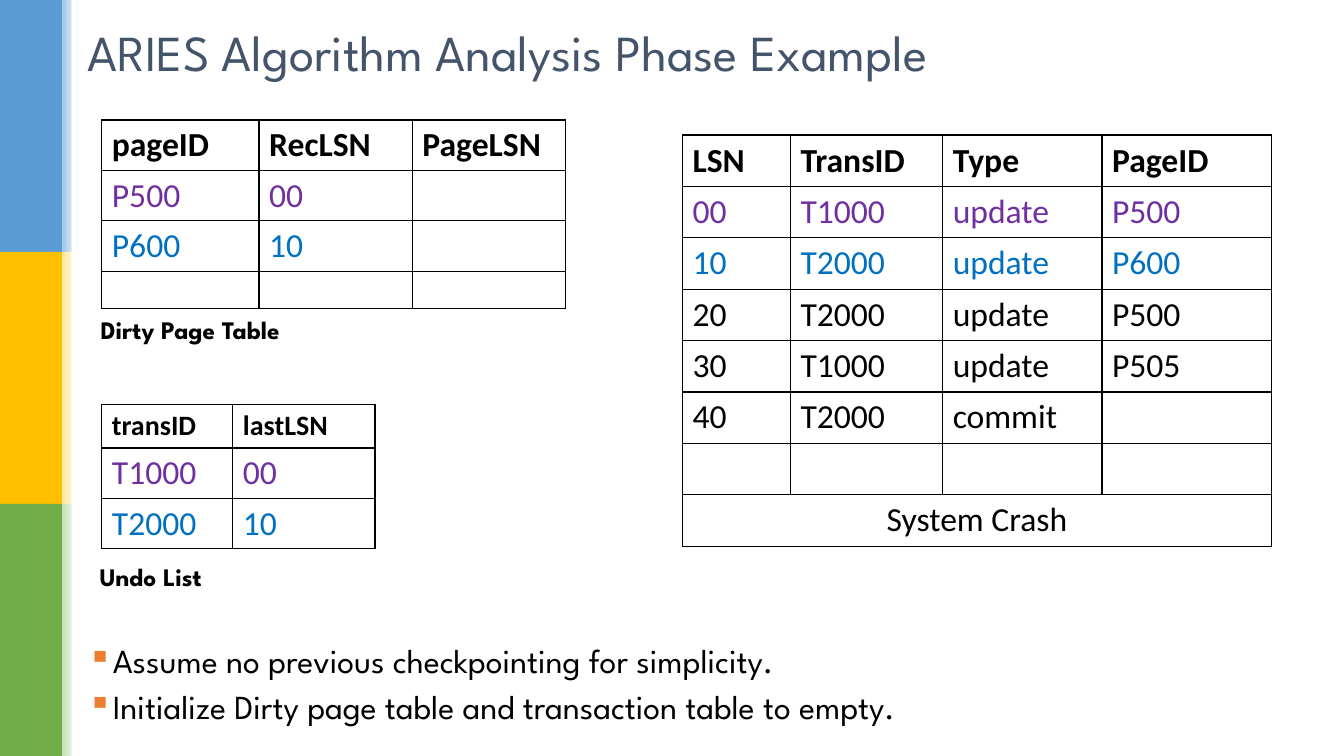
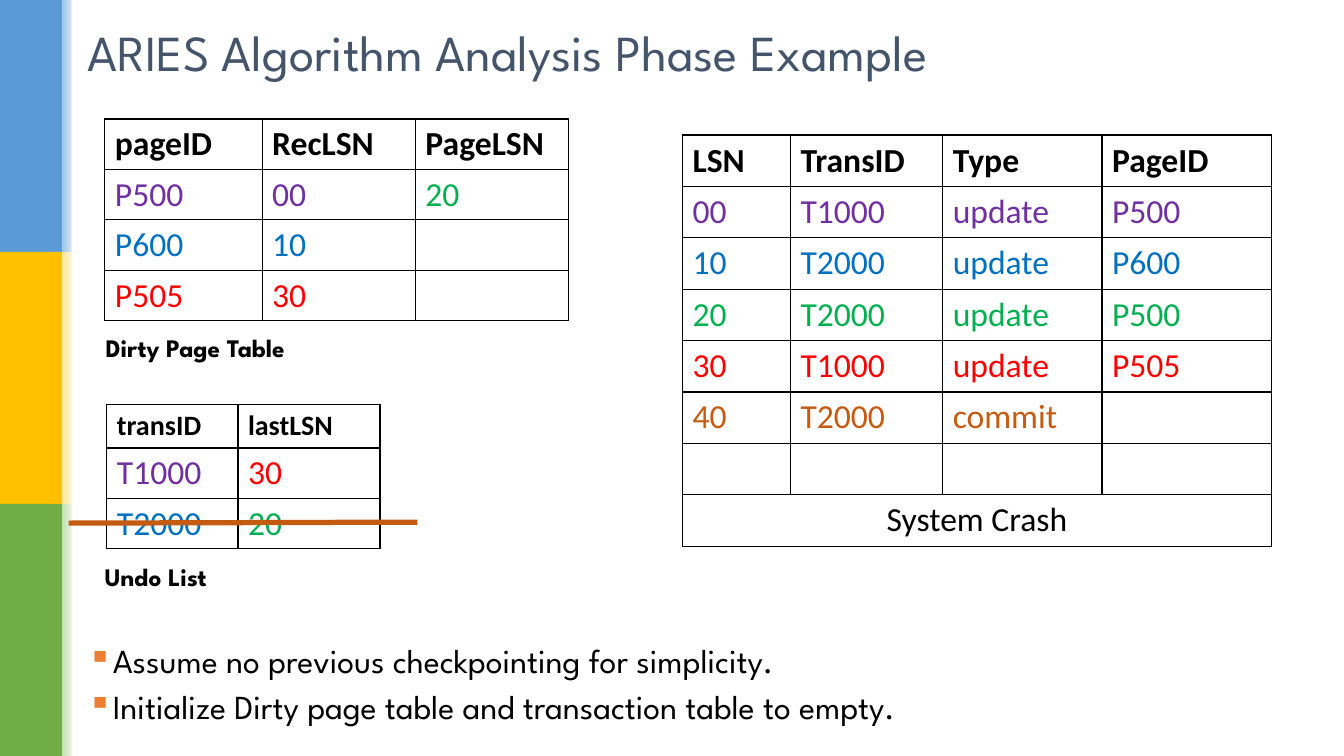
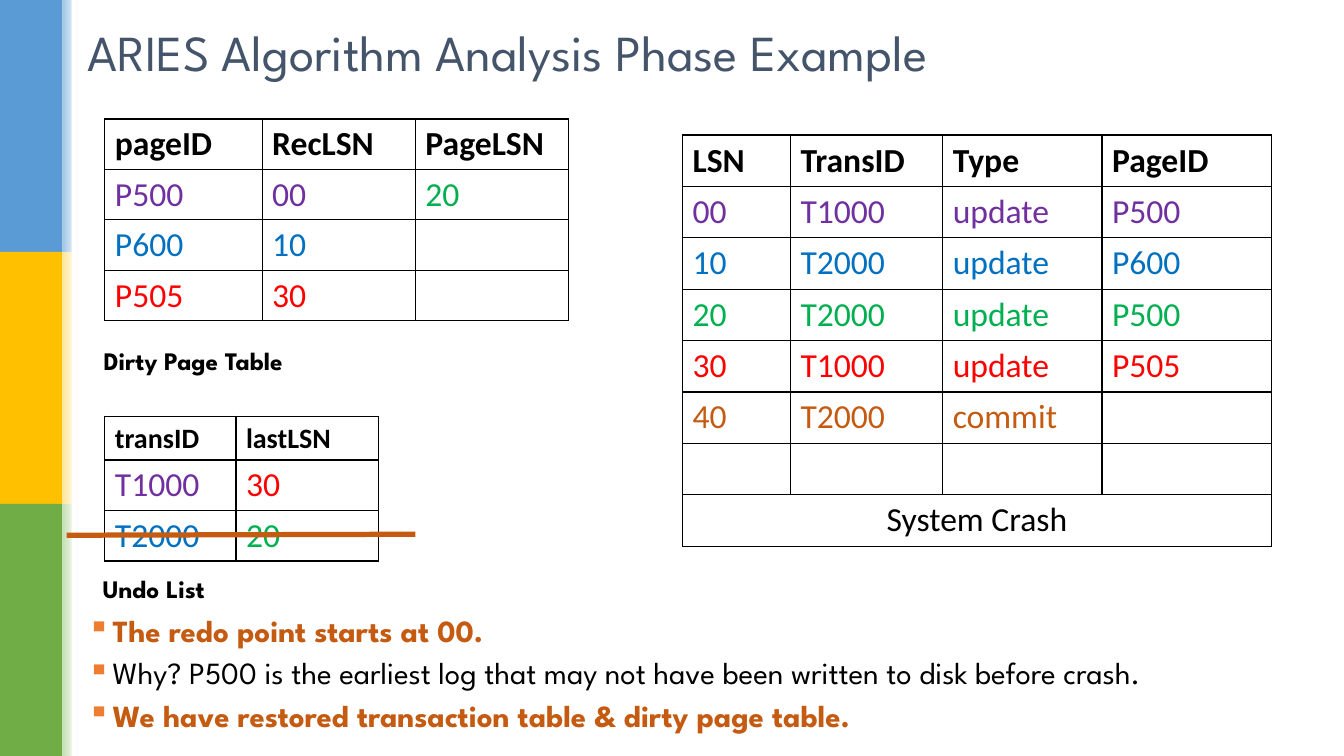
from dataclasses import dataclass

from lxml import etree
from pptx import Presentation
from pptx.dml.color import RGBColor
from pptx.enum.shapes import MSO_CONNECTOR, MSO_SHAPE
from pptx.enum.text import MSO_ANCHOR, PP_ALIGN
from pptx.oxml.ns import qn
from pptx.util import Inches, Pt

RECTANGLE = MSO_SHAPE.RECTANGLE
STRAIGHT = MSO_CONNECTOR.STRAIGHT
MIDDLE, TOP = MSO_ANCHOR.MIDDLE, MSO_ANCHOR.TOP
CENTER = PP_ALIGN.CENTER


@dataclass(frozen=True)
class Theme:
    heading_font: str = "League Spartan"
    table_font: str = "Calibri"
    title: str = "44546A"
    black: str = "000000"
    white: str = "FFFFFF"
    bullet: str = "ED7D31"
    purple: str = "7030A0"
    blue: str = "0070C0"
    green: str = "00B050"
    red: str = "FF0000"
    rust: str = "C55A11"
    # Band colour and the start of the fade beside it, from top to bottom
    bands: tuple = (("5B9BD5", "9DC3E6"), ("FFC000", "FFE699"), ("70AD47", "C5E0B4"))
    title_size: int = 36
    body_size: int = 24
    small_body_size: int = 22
    small_header_size: int = 20
    label_size: int = 18
    empty_cell_size: int = 16
    border_width: float = 1
    strike_width: float = 3.75


THEME = Theme()


def rgb(colour):
    return RGBColor.from_string(colour)


def coloured_row(colour, *texts):
    return [(text, colour) for text in texts]


class Deck:
    def __init__(self):
        self.presentation = Presentation()
        self.presentation.slide_width = Inches(13.33)
        self.presentation.slide_height = Inches(7.5)
        self.slide = None

    def new_slide(self, title):
        self.slide = self.presentation.slides.add_slide(self.presentation.slide_layouts[6])
        self.side_bands()
        frame = self.text_frame(0.77, 0.22, 10.34, 0.58, MIDDLE)
        self.run(frame.paragraphs[0], title, THEME.title_size, THEME.title)

    def rectangle(self, left, top, width, height, colour, fade_to=None):
        shape = self.slide.shapes.add_shape(
            RECTANGLE, Inches(left), Inches(top), Inches(width), Inches(height))
        shape.shadow.inherit = False
        shape.line.fill.background()
        if fade_to is None:
            shape.fill.solid()
            shape.fill.fore_color.rgb = rgb(colour)
            return
        shape.fill.gradient()
        shape.fill.gradient_angle = 0
        for stop, stop_colour in zip(shape.fill.gradient_stops, (colour, fade_to)):
            stop.color.rgb = rgb(stop_colour)

    def side_bands(self):
        height = 2.5
        for index, (colour, fade) in enumerate(THEME.bands):
            self.rectangle(0, index * height, 0.62, height, colour)
            self.rectangle(0.62, index * height, 0.16, height, fade, THEME.white)
        self.rectangle(0.71, 0, 0.05, 7.5, THEME.white)

    def text_frame(self, left, top, width, height, anchor=TOP):
        box = self.slide.shapes.add_textbox(
            Inches(left), Inches(top), Inches(width), Inches(height))
        box.text_frame.word_wrap = True
        box.text_frame.vertical_anchor = anchor
        return box.text_frame

    def run(self, paragraph, text, size, colour, bold=False, font=THEME.heading_font):
        run = paragraph.add_run()
        run.text = text
        run.font.name = font
        run.font.size = Pt(size)
        run.font.bold = bold
        run.font.color.rgb = rgb(colour)

    def label(self, left, top, text):
        frame = self.text_frame(left, top, 2.56, 0.4)
        self.run(frame.paragraphs[0], text, THEME.label_size, THEME.black, bold=True)

    def bullets(self, top, width, height, size, items):
        """Items are (text, emphasised) pairs."""
        frame = self.text_frame(0.77, top, width, height)
        for index, (text, emphasised) in enumerate(items):
            paragraph = frame.add_paragraph() if index else frame.paragraphs[0]
            paragraph.line_spacing = 0.9
            paragraph.space_before = Pt(0.3 * size if index else 0)
            properties = paragraph._p.get_or_add_pPr()
            properties.set("marL", str(Inches(0.25)))
            properties.set("indent", str(-Inches(0.25)))
            bullet_colour = etree.SubElement(properties, qn("a:buClr"))
            etree.SubElement(bullet_colour, qn("a:srgbClr"), val=THEME.bullet)
            etree.SubElement(properties, qn("a:buChar"), char="▪")
            colour = THEME.rust if emphasised else THEME.black
            self.run(paragraph, text, size, colour, emphasised)

    def cell_borders(self, cell):
        properties = cell._tc.get_or_add_tcPr()
        for side in ("a:lnL", "a:lnR", "a:lnT", "a:lnB"):
            line = etree.SubElement(properties, qn(side), w=str(Pt(THEME.border_width)))
            fill = etree.SubElement(line, qn("a:solidFill"))
            etree.SubElement(fill, qn("a:srgbClr"), val=THEME.black)

    def table(self, left, top, widths, heights, header, rows, header_size=THEME.body_size):
        """Rows are lists of (text, colour) pairs; missing cells stay empty."""
        frame = self.slide.shapes.add_table(
            len(heights), len(widths), Inches(left), Inches(top),
            Inches(sum(widths)), Inches(sum(heights)))
        table = frame.table
        table.first_row = table.horz_banding = False
        for column, width in zip(table.columns, widths):
            column.width = Inches(width)
        for row, height in zip(table.rows, heights):
            row.height = Inches(height)
        contents = {(0, column): (text, THEME.black) for column, text in enumerate(header)}
        for row_index, row in enumerate(rows, 1):
            for column_index, content in enumerate(row):
                contents[row_index, column_index] = content
        for row_index in range(len(heights)):
            for column_index in range(len(widths)):
                cell = table.cell(row_index, column_index)
                self.cell_borders(cell)
                cell.fill.background()
                paragraph = cell.text_frame.paragraphs[0]
                if (row_index, column_index) in contents:
                    text, colour = contents[row_index, column_index]
                    is_header = row_index == 0
                    size = header_size if is_header else THEME.body_size
                    self.run(paragraph, text, size, colour, is_header, THEME.table_font)
                else:
                    etree.SubElement(paragraph._p, qn("a:endParaRPr"),
                                     sz=str(THEME.empty_cell_size * 100))
        return table

    def log_table(self, row_colours):
        records = (
            ("00", "T1000", "update", "P500"),
            ("10", "T2000", "update", "P600"),
            ("20", "T2000", "update", "P500"),
            ("30", "T1000", "update", "P505"),
            ("40", "T2000", "commit"),
        )
        rows = [coloured_row(colour, *record) for colour, record in zip(row_colours, records)]
        rows += [[], coloured_row(THEME.black, "System Crash")]
        table = self.table(6.77, 1.34, (1.07, 1.51, 1.58, 1.68), [0.51] * 8,
                           ("LSN", "TransID", "Type", "PageID"), rows)
        crash_cell = table.cell(7, 0)
        crash_cell.merge(table.cell(7, 3))
        crash_cell.text_frame.paragraphs[0].alignment = CENTER

    def dirty_page_table(self, left, top, last_height, rows, label_left, label_top):
        self.table(left, top, (1.56, 1.52, 1.52), (0.5, 0.5, 0.5, last_height),
                   ("pageID", "RecLSN", "PageLSN"), rows)
        self.label(label_left, label_top, "Dirty Page Table")

    def undo_list(self, left, top, rows, strike):
        self.table(left, top, (1.3, 1.41), (0.43, 0.5, 0.5),
                   ("transID", "lastLSN"), rows, THEME.small_header_size)
        self.label(left - 0.12, top + 1.51, "Undo List")
        if strike:
            self.strike_line(left - 0.38, top + 1.18, left + 3.08, top + 1.17)

    def strike_line(self, *ends):
        line = self.slide.shapes.add_connector(STRAIGHT, *(Inches(end) for end in ends))
        line.line.width = Pt(THEME.strike_width)
        line.line.color.rgb = rgb(THEME.rust)
        etree.SubElement(line._element.spPr, qn("a:effectLst"))


def main():
    deck = Deck()
    title = "ARIES Algorithm Analysis Phase Example"
    assumptions = (
        ("Assume no previous checkpointing for simplicity.", False),
        ("Initialize Dirty page table and transaction table to empty.", False),
    )
    conclusions = (
        ("The redo point starts at 00.", True),
        ("Why? P500 is the earliest log that may not have been written to disk before crash.",
         False),
        ("We have restored transaction table & dirty page table.", True),
    )
    assumption_layout = (6.34, 10.79, 1.03, THEME.body_size, assumptions)
    conclusion_layout = (6.06, 12.56, 1.37, THEME.small_body_size, conclusions)

    early_colours = (THEME.purple, THEME.blue) + (THEME.black,) * 3
    final_colours = (THEME.purple, THEME.blue, THEME.green, THEME.red, THEME.rust)
    early_pages = [coloured_row(THEME.purple, "P500", "00"),
                   coloured_row(THEME.blue, "P600", "10")]
    final_pages = [early_pages[0] + [("20", THEME.green)], early_pages[1],
                   coloured_row(THEME.red, "P505", "30")]
    early_undo = [coloured_row(THEME.purple, "T1000", "00"),
                  coloured_row(THEME.blue, "T2000", "10")]
    final_undo = [[("T1000", THEME.purple), ("30", THEME.red)],
                  [("T2000", THEME.blue), ("20", THEME.green)]]

    deck.new_slide(title)
    deck.log_table(early_colours)
    deck.dirty_page_table(1.01, 1.19, 0.37, early_pages, 0.9, 3.07)
    deck.undo_list(1.01, 4.01, early_undo, strike=False)
    deck.bullets(*assumption_layout)

    for undo_left, undo_top, label_left, label_top, bullet_layout in (
            (1.06, 4.01, 0.95, 3.25, assumption_layout),
            (1.04, 4.13, 0.93, 3.38, conclusion_layout)):
        deck.new_slide(title)
        deck.log_table(final_colours)
        deck.dirty_page_table(1.04, 1.18, 0.5, final_pages, label_left, label_top)
        deck.undo_list(undo_left, undo_top, final_undo, strike=True)
        deck.bullets(*bullet_layout)

    deck.presentation.save("out.pptx")


if __name__ == "__main__":
    main()
